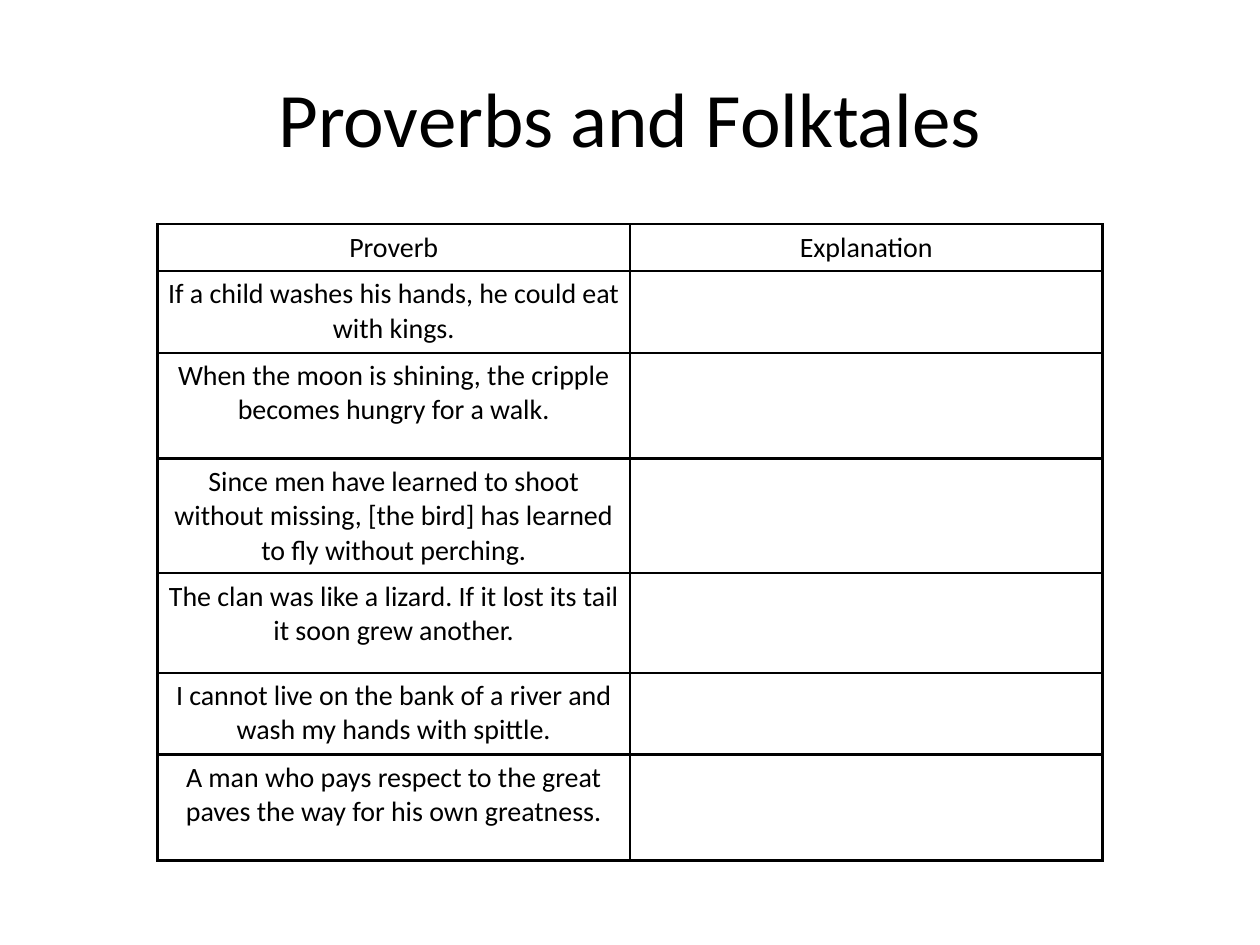
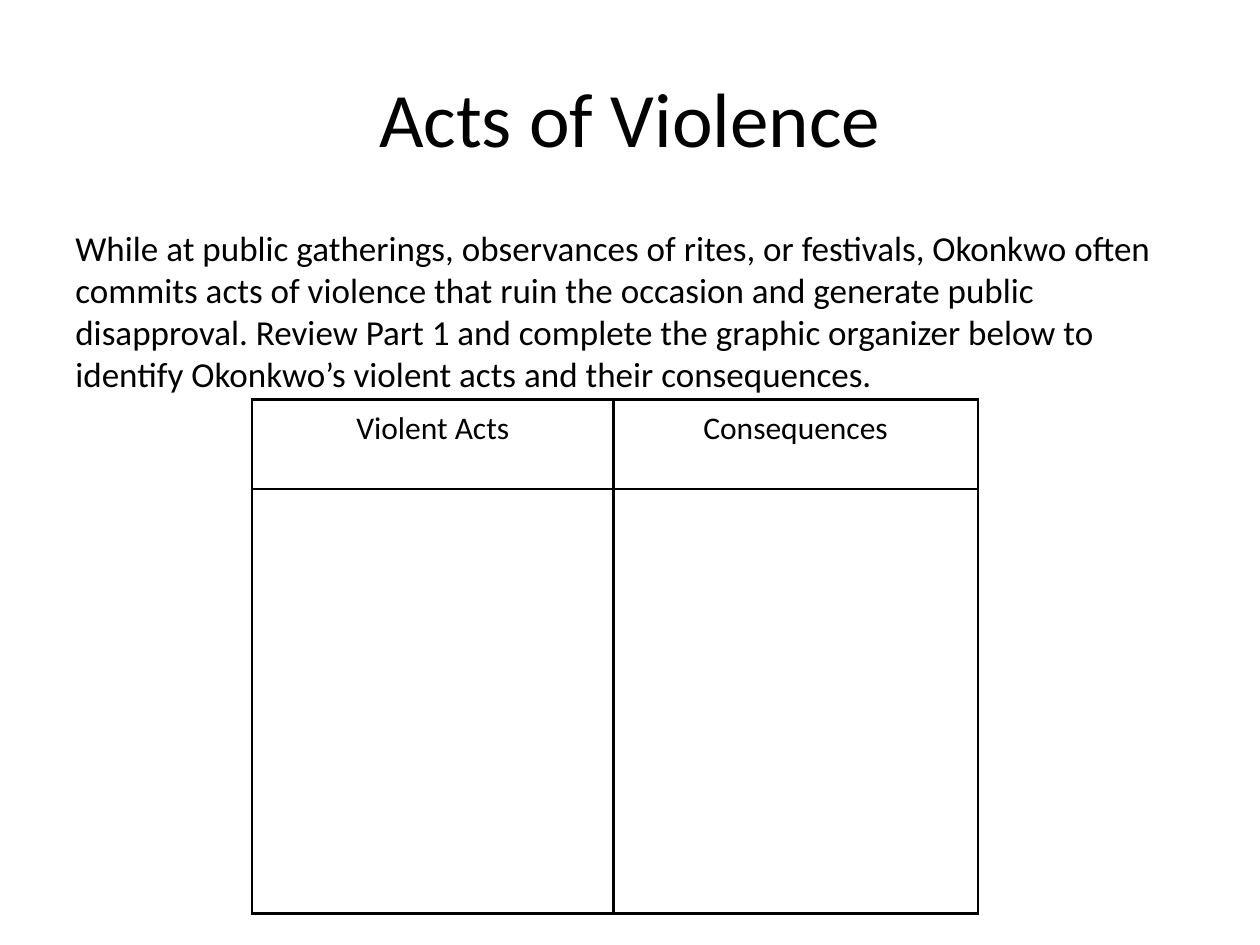
"""Build two worksheet slides, each with a title and a two-column table."""
from dataclasses import dataclass
from typing import Any

from lxml import etree
from pptx import Presentation
from pptx.dml.color import RGBColor
from pptx.enum import text
from pptx.oxml import ns
from pptx.util import Emu, Inches, Pt


@dataclass(frozen=True)
class Theme:
    """Colours, font and type sizes shared by the slides."""
    ink: str = "000000"
    paper: str = "FFFFFF"
    font: str = "Calibri"
    title: int = 44
    body: int = 20
    small_cell: int = 16
    large_cell: int = 18
    border: float = 1.5


@dataclass(frozen=True)
class Area:
    """A place on the page in grid columns and rows."""
    left: float
    top: float
    width: float
    height: float


@dataclass(frozen=True)
class Block:
    """A text block and its format."""
    words: str
    area: Area
    size: int
    align: Any
    anchor: Any


@dataclass(frozen=True)
class Worksheet:
    """A ruled table whose cells the reader completes."""
    left: float
    top: float
    columns: tuple[float, ...]
    rows: tuple[float, ...]
    cells: tuple[tuple[str, ...], ...]
    size: int
    inset: float


THEME = Theme()
CELL = Inches(0.1)
GRID_COLUMNS, GRID_ROWS = 100, 75
TITLE_AREA = Area(5, 3, 90, 12.5)
BODY_AREA = Area(5, 17.5, 90, 49.5)
CENTER, LEFT = text.PP_ALIGN.CENTER, text.PP_ALIGN.LEFT

PROVERBS = (
    "If a child washes his hands, he could eat with kings.",
    "When the moon is shining, the cripple becomes hungry for a walk.",
    "Since men have learned to shoot without missing, [the bird] has learned to fly without perching.",
    "The clan was like a lizard. If it lost its tail it soon grew another.",
    "I cannot live on the bank of a river and wash my hands with spittle.",
    "A man who pays respect to the great paves the way for his own greatness.",
)
INSTRUCTIONS = (
    "While at public gatherings, observances of rites, or festivals, Okonkwo often "
    "commits acts of violence that ruin the occasion and generate public disapproval. "
    "Review Part 1 and complete the graphic organizer below to identify Okonkwo’s "
    "violent acts and their consequences."
)
PROVERB_TABLE = Worksheet(
    12.5, 17.8, (37.5, 37.5), (3.7, 6.5, 8.4, 9.1, 7.9, 6.5, 8.4),
    (("Proverb", "Explanation"), *((proverb, "") for proverb in PROVERBS)),
    THEME.small_cell, 0.5)
VIOLENCE_TABLE = Worksheet(
    20, 31.7, (28.7, 28.9), (7.1, 33.7),
    (("Violent Acts", "Consequences"), ("", "")),
    THEME.large_cell, 0.8)


def grid(count: float) -> Emu:
    """Turn a count of grid cells into a length."""
    return Emu(round(count * CELL))


def apply(target: Any, values: dict[str, Any]) -> None:
    """Set each named attribute on the target."""
    for name, value in values.items():
        setattr(target, name, value)


def write(para: Any, words: str, size: int, align: Any) -> None:
    """Write one formatted span into a paragraph."""
    para.alignment = align
    span = para.add_run()
    span.text = words
    apply(span.font, {"name": THEME.font, "size": Pt(size), "bold": False})
    span.font.color.rgb = RGBColor.from_string(THEME.ink)


def add_block(page: Any, block: Block) -> None:
    """Place a text block on the page."""
    area = block.area
    box = page.shapes.add_textbox(*map(grid, (area.left, area.top, area.width, area.height)))
    apply(box.text_frame, {"word_wrap": True, "vertical_anchor": block.anchor})
    write(box.text_frame.paragraphs[0], block.words, block.size, block.align)


def rule_cell(cell: Any) -> None:
    """Draw the four borders of a table cell."""
    properties = cell._tc.get_or_add_tcPr()
    for index, side in enumerate(("lnL", "lnR", "lnT", "lnB")):
        line = etree.Element(ns.qn(f"a:{side}"), w=str(Pt(THEME.border)))
        fill = etree.SubElement(line, ns.qn("a:solidFill"))
        etree.SubElement(fill, ns.qn("a:srgbClr"), val=THEME.ink)
        properties.insert(index, line)


def add_worksheet(page: Any, sheet: Worksheet) -> None:
    """Place a ruled worksheet table on the page."""
    lengths = map(grid, (sheet.left, sheet.top, sum(sheet.columns), sum(sheet.rows)))
    table = page.shapes.add_table(len(sheet.rows), len(sheet.columns), *lengths).table
    apply(table, {"first_row": False, "horz_banding": False})
    for column, width in zip(table.columns, sheet.columns):
        column.width = grid(width)
    margins = dict.fromkeys(
        ("margin_left", "margin_right", "margin_top", "margin_bottom"), grid(sheet.inset))
    for row, height, entries in zip(table.rows, sheet.rows, sheet.cells):
        row.height = grid(height)
        for cell, words in zip(row.cells, entries):
            apply(cell, margins)
            cell.fill.solid()
            cell.fill.fore_color.rgb = RGBColor.from_string(THEME.paper)
            rule_cell(cell)
            if words:
                write(cell.text_frame.paragraphs[0], words, sheet.size, CENTER)


def add_page(deck: Any, title: str) -> Any:
    """Add a blank page with the shared background and title."""
    page = deck.slides.add_slide(deck.slide_layouts[6])
    page.background.fill.solid()
    page.background.fill.fore_color.rgb = RGBColor.from_string(THEME.paper)
    add_block(page, Block(title, TITLE_AREA, THEME.title, CENTER, text.MSO_ANCHOR.MIDDLE))
    return page


def main() -> None:
    """Build and save the deck."""
    deck = Presentation()
    apply(deck, {"slide_width": grid(GRID_COLUMNS), "slide_height": grid(GRID_ROWS)})
    proverbs = add_page(deck, "Proverbs and Folktales")
    add_worksheet(proverbs, PROVERB_TABLE)
    violence = add_page(deck, "Acts of Violence")
    add_block(violence, Block(INSTRUCTIONS, BODY_AREA, THEME.body, LEFT, text.MSO_ANCHOR.TOP))
    add_worksheet(violence, VIOLENCE_TABLE)
    deck.save("out.pptx")


if __name__ == "__main__":
    main()
